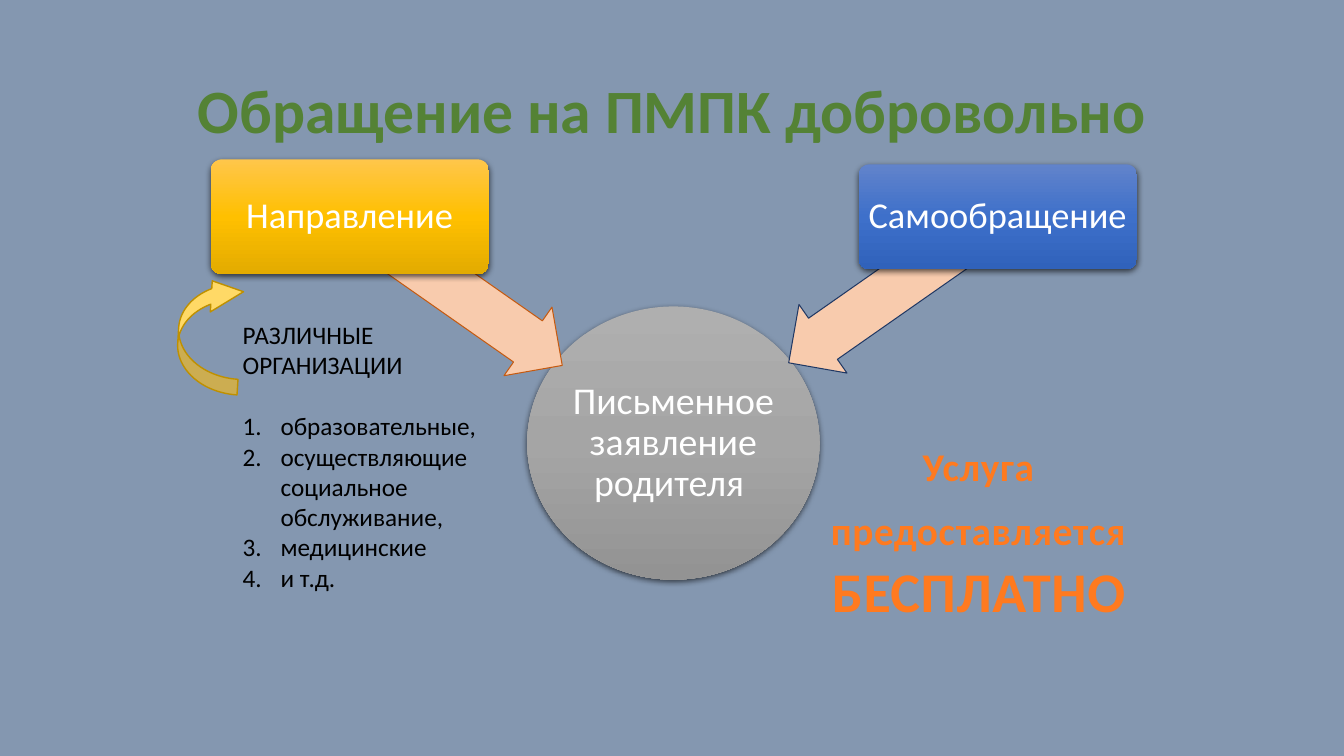
"""Builds a slide on voluntary application to the commission."""
from lxml import etree
from pptx import Presentation
from pptx import util as u
from pptx.dml.color import RGBColor
from pptx.enum import shapes, text
from pptx.oxml import ns

THEME = {
    "font": "Calibri", "back": "8497B0", "title": "548235", "light": "FFFFFF",
    "dark": "000000", "free": "FF7A1F", "arrow": "F8CBAD",
    "gold": ("FFC64B", "FFC000", "E3AB00"),
    "blue": ("6183CB", "3E70CA", "3062BB"),
    "gray": ("AFAFAF", "A5A5A5", "939393"),
    "head": 44, "circle": 27, "box": 26, "list": 18, "note": 28, "big": 40,
}
TITLE = "Обращение на ПМПК добровольно"
KIND = shapes.MSO_SHAPE
NODES = [
    ("Письменное заявление родителя ", KIND.OVAL, (376.6, 218.9, 208.8, 195.1), "gray", "circle", 1.5),
    ("Направление", KIND.ROUNDED_RECTANGLE, (150.5, 113.8, 198.7, 82.1), "gold", "box", 3.5),
    ("Самообращение", KIND.ROUNDED_RECTANGLE, (613.4, 117.4, 198.7, 74.9), "blue", "box", 3.5),
]
ARROWS = [
    (KIND.LEFT_ARROW, (218.9, 173.5, 200.9, 59.8), 215, (0.6, 0.5), "F8CBAD", "C55A11", 0.75),
    (KIND.LEFT_ARROW, (545.8, 173.5, 194.4, 59.8), 325, (0.6, 0.5), "F8CBAD", "203864", 0.75),
    (KIND.CURVED_RIGHT_ARROW, (127.4, 195.8, 44.6, 85), 3.6, (0.25, 0.5, 0.51), "FFD966", "BF9000", 1),
]
HEADS = ["РАЗЛИЧНЫЕ", "ОРГАНИЗАЦИИ"]
ITEMS = ["образовательные,", "осуществляющие социальное обслуживание,", "медицинские", "и т.д."]
NOTE = [("Услуга предоставляется", "note"), (" БЕСПЛАТНО", "big")]


def color(code):
    """Turn a hex code into a colour."""
    return RGBColor.from_string(code)


def child(node, tag, **attrs):
    """Add a drawing element to a node."""
    return etree.SubElement(node, ns.qn("a:" + tag), attrs)


def write(para, words, size="list", tone="dark", bold=False, align="LEFT", lead=1.0, track=0):
    """Add a formatted run to a paragraph."""
    para.alignment = getattr(text.PP_ALIGN, align)
    para.line_spacing = lead
    run = para.add_run()
    run.text = words
    font = run.font
    font.name, font.size, font.bold = THEME["font"], u.Pt(THEME[size]), bold
    font.color.rgb = color(THEME[tone])
    if track:
        font._element.set("spc", str(track))


def shape(slide, kind, place):
    """Add a shape without a shadow."""
    item = slide.shapes.add_shape(kind, *map(u.Pt, place))
    item.shadow.inherit = False
    return item


def node(slide, words, kind, place, tones, size, inset):
    """Add a shaded shape with a centred label."""
    item = shape(slide, kind, place)
    if kind == KIND.ROUNDED_RECTANGLE:
        item.adjustments[0] = 0.1
    item.line.fill.background()
    item.fill.gradient()
    item.fill.gradient_angle = 270
    props = item.element.spPr
    stops = props.find(".//" + ns.qn("a:gsLst"))
    for old in list(stops):
        stops.remove(old)
    for step, tone in enumerate(THEME[tones]):
        child(child(stops, "gs", pos=str(step * 50000)), "srgbClr", val=tone)
    glow = child(props.find(ns.qn("a:effectLst")), "outerShdw", blurRad=str(u.Pt(4.5)),
                 dist=str(u.Pt(1.5)), dir="5400000", algn="ctr", rotWithShape="0")
    child(child(glow, "srgbClr", val=THEME["dark"]), "alpha", val="63000")
    frame = item.text_frame
    frame.word_wrap = True
    frame.vertical_anchor = text.MSO_ANCHOR.MIDDLE
    frame.margin_left = frame.margin_right = frame.margin_top = frame.margin_bottom = u.Pt(inset)
    write(frame.paragraphs[0], words, size=size, tone="light", align="CENTER", lead=0.9)


def arrow(slide, kind, place, turn, bends, fill, edge, width):
    """Add a turned block arrow."""
    item = shape(slide, kind, place)
    item.rotation = turn
    for spot, bend in enumerate(bends):
        item.adjustments[spot] = bend
    item.fill.solid()
    item.fill.fore_color.rgb = color(fill)
    item.line.color.rgb = color(edge)
    item.line.width = u.Pt(width)
    if kind == KIND.CURVED_RIGHT_ARROW:
        item.element.spPr.find(ns.qn("a:xfrm")).set("flipV", "1")


def box(slide, place):
    """Add a wrapping text box and return its frame."""
    frame = slide.shapes.add_textbox(*map(u.Pt, place)).text_frame
    frame.word_wrap = True
    return frame


def listing(slide):
    """Add the numbered list of organisations."""
    frame = box(slide, (166.3, 224.6, 189.4, 203.8))
    for spot, words in enumerate(HEADS + ITEMS):
        para = frame.add_paragraph() if spot else frame.paragraphs[0]
        write(para, words)
        if spot == len(HEADS):
            para.space_before = u.Pt(22)
        if spot >= len(HEADS):
            props = para._p.get_or_add_pPr()
            props.set("marL", str(u.Pt(27)))
            props.set("indent", str(-u.Pt(27)))
            child(props, "buFont", typeface="+mj-lt")
            child(props, "buAutoNum", type="arabicPeriod")


def main():
    """Build and save the slide."""
    deck = Presentation()
    deck.slide_width, deck.slide_height = u.Pt(960), u.Pt(540)
    slide = deck.slides.add_slide(deck.slide_layouts[5])
    slide.background.fill.solid()
    slide.background.fill.fore_color.rgb = color(THEME["back"])
    title = slide.shapes.title
    title.left, title.top, title.width, title.height = map(u.Pt, (66.2, 28.8, 828, 104.4))
    frame = title.text_frame
    frame.auto_size = text.MSO_AUTO_SIZE.NONE
    frame.vertical_anchor = text.MSO_ANCHOR.MIDDLE
    write(frame.paragraphs[0], TITLE, size="head", tone="title", bold=True, align="CENTER", lead=0.9)
    node(slide, *NODES[0])
    for data, label in zip(ARROWS, NODES[1:]):
        arrow(slide, *data)
        node(slide, *label)
    arrow(slide, *ARROWS[-1])
    listing(slide)
    para = box(slide, (565.2, 312.5, 267.8, 138.2)).paragraphs[0]
    for words, size in NOTE:
        write(para, words, size=size, tone="free", bold=True, align="CENTER", track=50)
    deck.save("out.pptx")


if __name__ == "__main__":
    main()
